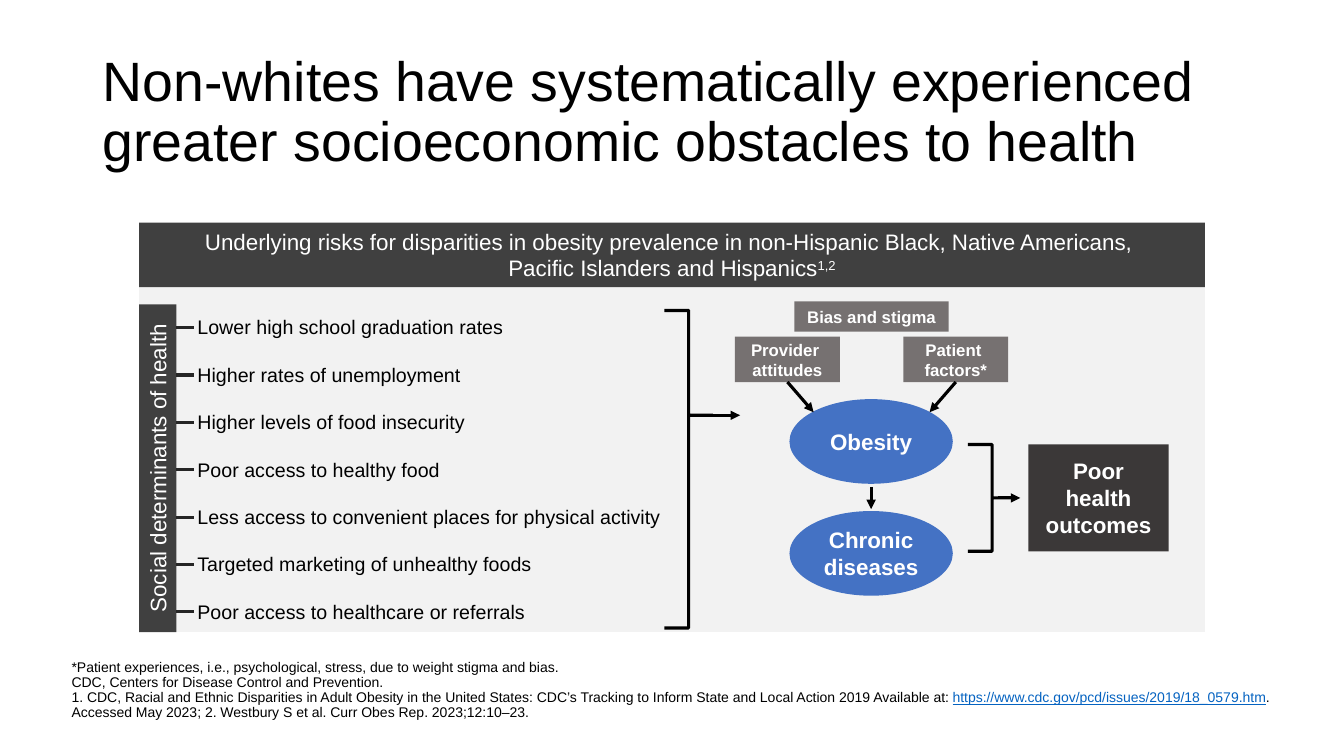
from lxml import etree
from pptx import Presentation
from pptx.dml.color import RGBColor
from pptx.enum.shapes import MSO_CONNECTOR, MSO_SHAPE
from pptx.enum.text import MSO_ANCHOR, PP_ALIGN
from pptx.oxml.ns import qn
from pptx.util import Inches, Pt

RECT, OVAL, BRACE = MSO_SHAPE.RECTANGLE, MSO_SHAPE.OVAL, MSO_SHAPE.RIGHT_BRACE
STRAIGHT = MSO_CONNECTOR.STRAIGHT
LEFT, CENTER = PP_ALIGN.LEFT, PP_ALIGN.CENTER
TOP, MIDDLE, BOTTOM = MSO_ANCHOR.TOP, MSO_ANCHOR.MIDDLE, MSO_ANCHOR.BOTTOM

COLORS = {
    "black": "000000", "white": "FFFFFF", "panel": "F2F2F2", "band": "404040",
    "tick": "262626", "condition": "4472C4", "outcome": "3B3838",
    "factor": "767171", "link": "0563C1",
}
FONT = "Arial"

TITLE = "Non-whites have systematically experienced greater socioeconomic obstacles to health"
HEADER = ("Underlying risks for disparities in obesity prevalence in non-Hispanic Black, "
          "Native Americans, \vPacific Islanders and Hispanics")
HEADER_REFERENCES = "1,2"
SIDEBAR = "Social determinants of health"
DETERMINANTS = [
    ("Lower high school graduation rates", 3.4),
    ("Higher rates of unemployment", 2.87),
    ("Higher levels of food insecurity", 2.98),
    ("Poor access to healthy food", 2.87),
    ("Less access to convenient places for physical activity", 4.85),
    ("Targeted marketing of unhealthy foods", 3.7),
    ("Poor access to healthcare or referrals", 3.54),
]
CONDITIONS = [("Obesity", 3.96), ("Chronic diseases", 5.07)]
OUTCOME = "Poor health outcomes"
BIAS = "Bias and stigma"
FACTORS = [("Provider \vattitudes", 7.29, 8.07), ("Patient \vfactors*", 8.96, 9.22)]
BRACES = [((9.6, 4.41, 0.48, 1.06), 0.5, (9.9, 4.94), (10.12, 4.94)),
          ((6.59, 3.08, 0.48, 3.15), 0.33, (7.07, 4.12), (7.34, 4.12))]
FOOTNOTE = ("*Patient experiences, i.e., psychological, stress, due to weight stigma and bias.\v"
            "CDC, Centers for Disease Control and Prevention.\v"
            "1. CDC, Racial and Ethnic Disparities in Adult Obesity in the United States: "
            "CDC’s Tracking to Inform State and Local Action 2019 Available at: ")
FOOTNOTE_LINK = "https://www.cdc.gov/pcd/issues/2019/18_0579.htm"
FOOTNOTE_END = ". Accessed May 2023; 2. Westbury S et al. Curr Obes Rep. 2023;12:10–23."

FIRST_ROW, ROW_PITCH = 3.08, 0.47
TICK_OFFSET = 0.17


def rgb(name):
    return RGBColor.from_string(COLORS[name])


def write(shape, text, size, color="white", align=CENTER, anchor=MIDDLE, bold=False):
    frame = shape.text_frame
    frame.word_wrap = True
    frame.vertical_anchor = anchor
    paragraph = frame.paragraphs[0]
    paragraph.text = text
    paragraph.alignment = align
    font = paragraph.font
    font.name, font.size, font.bold = FONT, Pt(size), bold
    font.color.rgb = rgb(color)
    return paragraph


def add_run(paragraph, text):
    run = paragraph.add_run()
    run.text = text
    return run


def add_text(slide, box, text, size, anchor=TOP):
    textbox = slide.shapes.add_textbox(*map(Inches, box))
    return textbox, write(textbox, text, size, "black", LEFT, anchor)


def add_block(slide, kind, box, fill):
    block = slide.shapes.add_shape(kind, *map(Inches, box))
    block.shadow.inherit = False
    block.fill.solid()
    block.fill.fore_color.rgb = rgb(fill)
    block.line.fill.background()
    return block


def add_line(slide, start, end, color="black", arrow=True):
    line = slide.shapes.add_connector(STRAIGHT, *map(Inches, start + end))
    line.line.color.rgb = rgb(color)
    line.line.width = Pt(2.25)
    if arrow:
        etree.SubElement(line.line._get_or_add_ln(), qn("a:tailEnd"), type="triangle")
    etree.SubElement(line._element.spPr, qn("a:effectLst"))
    return line


def add_brace(slide, box, point):
    brace = slide.shapes.add_shape(BRACE, *map(Inches, box))
    brace.shadow.inherit = False
    brace.fill.background()
    brace.line.color.rgb = rgb("black")
    brace.line.width = Pt(2.25)
    brace.adjustments[0] = 0
    brace.adjustments[1] = point


def add_heading_and_footnote(slide):
    _, title = add_text(slide, (0.92, 0.4, 11.5, 1.45), TITLE, 39.6, MIDDLE)
    title.line_spacing = 0.9
    footer, footnote = add_text(slide, (0.71, 6.8, 12.02, 0.35), FOOTNOTE, 10, BOTTOM)
    frame = footer.text_frame
    frame.margin_left = frame.margin_right = frame.margin_top = frame.margin_bottom = 0
    footnote.line_spacing = 0.9
    footnote.space_before = Pt(10)
    link = add_run(footnote, FOOTNOTE_LINK)
    link.font.color.rgb = rgb("link")
    link.font.underline = True
    add_run(footnote, FOOTNOTE_END)


def add_determinants(slide):
    add_block(slide, RECT, (1.38, 2.53, 10.57, 3.74), "panel")
    band = add_block(slide, RECT, (1.38, 2.21, 10.57, 0.64), "band")
    header = write(band, HEADER, 16, anchor=TOP)
    references = add_run(header, HEADER_REFERENCES)
    references.font._element.set("baseline", "30000")
    sidebar = add_block(slide, RECT, (-0.06, 4.46, 3.25, 0.37), "band")
    sidebar.rotation = 270
    write(sidebar, SIDEBAR, 16, anchor=TOP)
    for row, (determinant, width) in enumerate(DETERMINANTS):
        top = FIRST_ROW + row * ROW_PITCH
        add_text(slide, (1.86, top, width, 0.34), determinant, 14)
        tick = top + TICK_OFFSET
        add_line(slide, (1.75, tick), (1.92, tick), "tick", arrow=False)


def add_pathway(slide):
    for condition, top in CONDITIONS:
        oval = add_block(slide, OVAL, (7.83, top, 1.62, 0.84), "condition")
        write(oval, condition, 16, bold=True)
    outcome = add_block(slide, RECT, (10.2, 4.41, 1.39, 1.06), "outcome")
    write(outcome, OUTCOME, 16, bold=True)
    for box, point, start, end in BRACES:
        add_brace(slide, box, point)
        add_line(slide, start, end)
    add_line(slide, (8.64, 4.83), (8.64, 5.05))
    for factor, left, target in FACTORS:
        box = add_block(slide, RECT, (left, 3.34, 1.04, 0.45), "factor")
        write(box, factor, 12, bold=True)
        arrow = add_line(slide, (left + 0.52, 3.79), (target, 4.09))
        arrow.begin_connect(box, 2)
    bias = add_block(slide, RECT, (7.88, 2.99, 1.53, 0.3), "factor")
    write(bias, BIAS, 12, anchor=TOP, bold=True)


def main():
    """Build the slide on socioeconomic obstacles to health."""
    deck = Presentation()
    deck.slide_width, deck.slide_height = Inches(13.33), Inches(7.5)
    slide = deck.slides.add_slide(deck.slide_layouts[6])
    add_heading_and_footnote(slide)
    add_determinants(slide)
    add_pathway(slide)
    deck.save("out.pptx")


if __name__ == "__main__":
    main()
